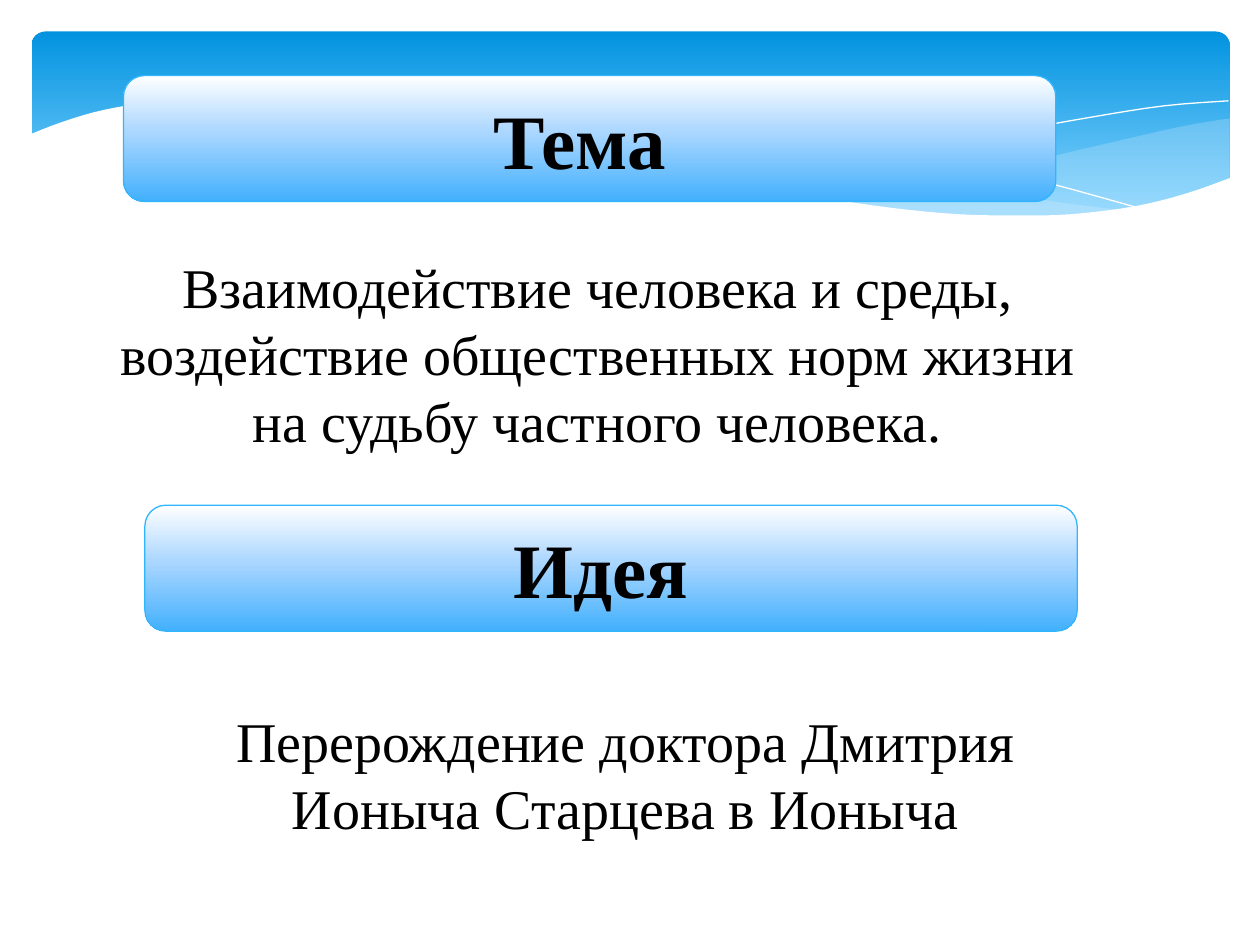
from dataclasses import dataclass

from lxml.etree import SubElement
from pptx import Presentation
from pptx.dml.color import RGBColor
from pptx.enum.shapes import MSO_SHAPE as Preset
from pptx.enum.text import MSO_ANCHOR as Anchor, MSO_AUTO_SIZE as AutoSize, PP_ALIGN as Align
from pptx.oxml.ns import qn
from pptx.util import Inches, Pt

FONT = "Times New Roman"
BLACK, WHITE, PALE_BLUE, BORDER_BLUE = "000000", "FFFFFF", "C6E7FC", "31B6FD"
BANNER_STOPS = [(0, "0293E0"), (90, "83D3FE")]
HEADING_STOPS = [(0, "FFFFFF"), (44, "ACD7FF"), (100, "42B0FD")]
Curve = list[tuple[float, float]]


@dataclass
class Wave:
    curves: list[Curve]  # smooth edges, joined by corners
    fill: str | None = None
    opacity: int = 100
    closed: bool = True


@dataclass
class Heading:
    text: str
    left: float
    top: float


@dataclass
class Body:
    lines: list[str]
    left: float
    top: float
    width: float
    height: float
    wrap: bool
    anchor: Anchor


WAVES = [
    Wave([[(9.76, 0.94), (9.35, 1.01), (8.61, 1.18), (7.79, 1.37), (7.06, 1.52), (6.61, 1.6)],
          [(6.61, 1.6), (7.18, 1.67), (7.69, 1.71), (8.24, 1.72), (8.72, 1.69),
           (9.21, 1.6), (9.49, 1.52), (9.76, 1.41)]], PALE_BLUE, 29),
    Wave([[(8.93, 1.67), (8.37, 1.6), (7.75, 1.49), (7.06, 1.34), (6.29, 1.16), (5.69, 1.02),
           (5.14, 0.92), (4.65, 0.86), (4.2, 0.82), (3.8, 0.8), (3.28, 0.81), (2.86, 0.86)],
          [(2.86, 0.86), (3.42, 0.94), (4.04, 1.06), (4.91, 1.26), (5.66, 1.43), (6.34, 1.56),
           (6.95, 1.65), (7.48, 1.7), (7.96, 1.73), (8.48, 1.72), (8.93, 1.67)]], PALE_BLUE, 40),
    Wave([[(3.09, 0.9), (3.44, 0.84), (4.01, 0.81), (4.5, 0.82), (5.1, 0.86), (5.82, 0.94),
           (6.65, 1.08), (7.6, 1.28), (8.31, 1.45), (9.07, 1.66)]], closed=False),
    Wave([[(6.13, 1.51), (6.72, 1.35), (7.48, 1.17), (8.06, 1.04), (8.66, 0.93),
           (9.24, 0.84), (9.75, 0.8)]], closed=False),
    Wave([[(9.77, 1.41), (9.4, 1.54), (8.99, 1.64), (8.5, 1.7), (8.09, 1.71), (7.61, 1.7),
           (7.08, 1.65), (6.47, 1.56), (5.79, 1.44), (5.03, 1.28), (4.47, 1.14), (3.91, 1.02),
           (3.39, 0.92), (2.92, 0.85), (2.5, 0.81), (1.93, 0.78), (1.46, 0.79), (1.06, 0.83),
           (0.75, 0.89), (0.46, 0.98), (0.23, 1.07)],
          [(0.23, 2.24), (9.77, 2.24)]], WHITE),
]
HEADINGS = [Heading("Тема ", 0.98, 0.6), Heading("Идея ", 1.15, 4.01)]
BODIES = [
    Body(["Взаимодействие человека и среды, ", "воздействие общественных норм жизни ",
          "на судьбу частного человека. "], 0.82, 1.94, 7.96, 1.72, False, Anchor.MIDDLE),
    Body(["Перерождение доктора Дмитрия Ионыча Старцева в Ионыча"],
         1.15, 5.56, 7.63, 1.18, True, Anchor.TOP),
]


def color(value: str) -> RGBColor:
    return RGBColor.from_string(value)


def smooth(points: Curve, steps: int = 4) -> Curve:
    """Catmull-Rom curve through the points."""
    if len(points) < 3:
        return points
    padded = [points[0], *points, points[-1]]
    result = []
    for a, b, c, d in zip(padded, padded[1:], padded[2:], padded[3:]):
        for step in range(steps):
            t = step / steps
            result.append(tuple(
                (2 * q + (r - p) * t + (2 * p - 5 * q + 4 * r - s) * t ** 2
                 + (3 * q - p - 3 * r + s) * t ** 3) / 2
                for p, q, r, s in zip(a, b, c, d)))
    return result + [points[-1]]


def fill_gradient(shape, stops: list[tuple[int, str]]) -> None:
    """Top-to-bottom gradient with any number of stops."""
    shape.fill.gradient()
    gradient = shape._element.spPr.find(qn("a:gradFill"))
    for child in list(gradient):
        gradient.remove(child)
    stop_list = SubElement(gradient, qn("a:gsLst"))
    for position, value in stops:
        stop = SubElement(stop_list, qn("a:gs"), pos=str(position * 1000))
        SubElement(stop, qn("a:srgbClr"), val=value)
    SubElement(gradient, qn("a:lin"), ang="5400000", scaled="0")


def add_round_box(page, left: float, top: float, width: float, height: float, stops):
    box = page.shapes.add_shape(Preset.ROUNDED_RECTANGLE, Inches(left), Inches(top),
                                Inches(width), Inches(height))
    box.shadow.inherit = False
    fill_gradient(box, stops)
    return box


def add_wave(page, wave: Wave) -> None:
    outline = [(Inches(x), Inches(y)) for curve in wave.curves for x, y in smooth(curve)]
    builder = page.shapes.build_freeform(*outline[0])
    builder.add_line_segments(outline[1:], close=wave.closed)
    shape = builder.convert_to_shape()
    shape.shadow.inherit = False
    if wave.fill is None:
        shape.fill.background()
        shape.line.color.rgb = color(WHITE)
        shape.line.width = Pt(0)
        return
    shape.line.fill.background()
    shape.fill.solid()
    shape.fill.fore_color.rgb = color(wave.fill)
    if wave.opacity < 100:
        tint = shape._element.spPr.find(qn("a:solidFill"))[0]
        SubElement(tint, qn("a:alpha"), val=str(wave.opacity * 1000))


def write_lines(frame, lines: list[str], size: int, bold: bool = False) -> None:
    font_format = {"name": FONT, "size": Pt(size), "bold": bold}
    for index, line in enumerate(lines):
        para = frame.add_paragraph() if index else frame.paragraphs[0]
        para.alignment = Align.CENTER
        span = para.add_run()
        span.text = line
        for name, value in font_format.items():
            setattr(span.font, name, value)
        span.font.color.rgb = color(BLACK)


def add_heading(page, heading: Heading) -> None:
    box = add_round_box(page, heading.left, heading.top, 7.4, 1, HEADING_STOPS)
    box.line.color.rgb = color(BORDER_BLUE)
    box.line.width = Pt(0.75)
    box.text_frame.vertical_anchor = Anchor.MIDDLE
    write_lines(box.text_frame, [heading.text], 44, bold=True)


def add_body(page, body: Body) -> None:
    box = page.shapes.add_textbox(Inches(body.left), Inches(body.top),
                                  Inches(body.width), Inches(body.height))
    frame_format = {"word_wrap": body.wrap, "vertical_anchor": body.anchor,
                    "auto_size": AutoSize.SHAPE_TO_FIT_TEXT}
    for name, value in frame_format.items():
        setattr(box.text_frame, name, value)
    write_lines(box.text_frame, body.lines, 32)


def main() -> None:
    deck = Presentation()
    deck.slide_width, deck.slide_height = Inches(10), Inches(7.5)
    page = deck.slides.add_slide(deck.slide_layouts[6])

    # Banner and its waves
    banner = add_round_box(page, 0.25, 0.25, 9.51, 1.56, BANNER_STOPS)
    banner.adjustments[0] = 0.071
    banner.line.fill.background()
    for wave in WAVES:
        add_wave(page, wave)

    # Headings and their texts
    for heading, body in zip(HEADINGS, BODIES):
        add_heading(page, heading)
        add_body(page, body)

    deck.save("out.pptx")


if __name__ == "__main__":
    main()
